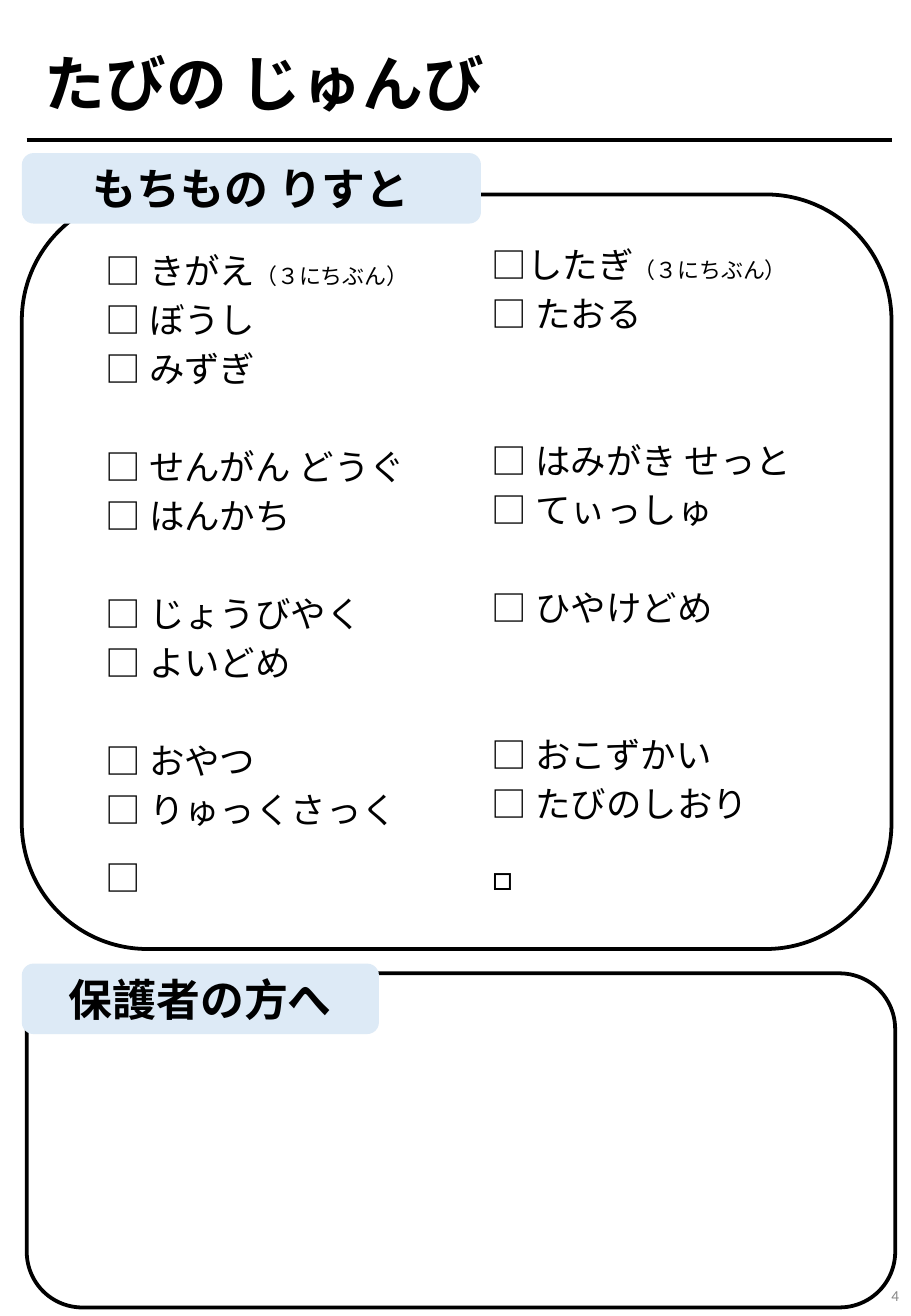
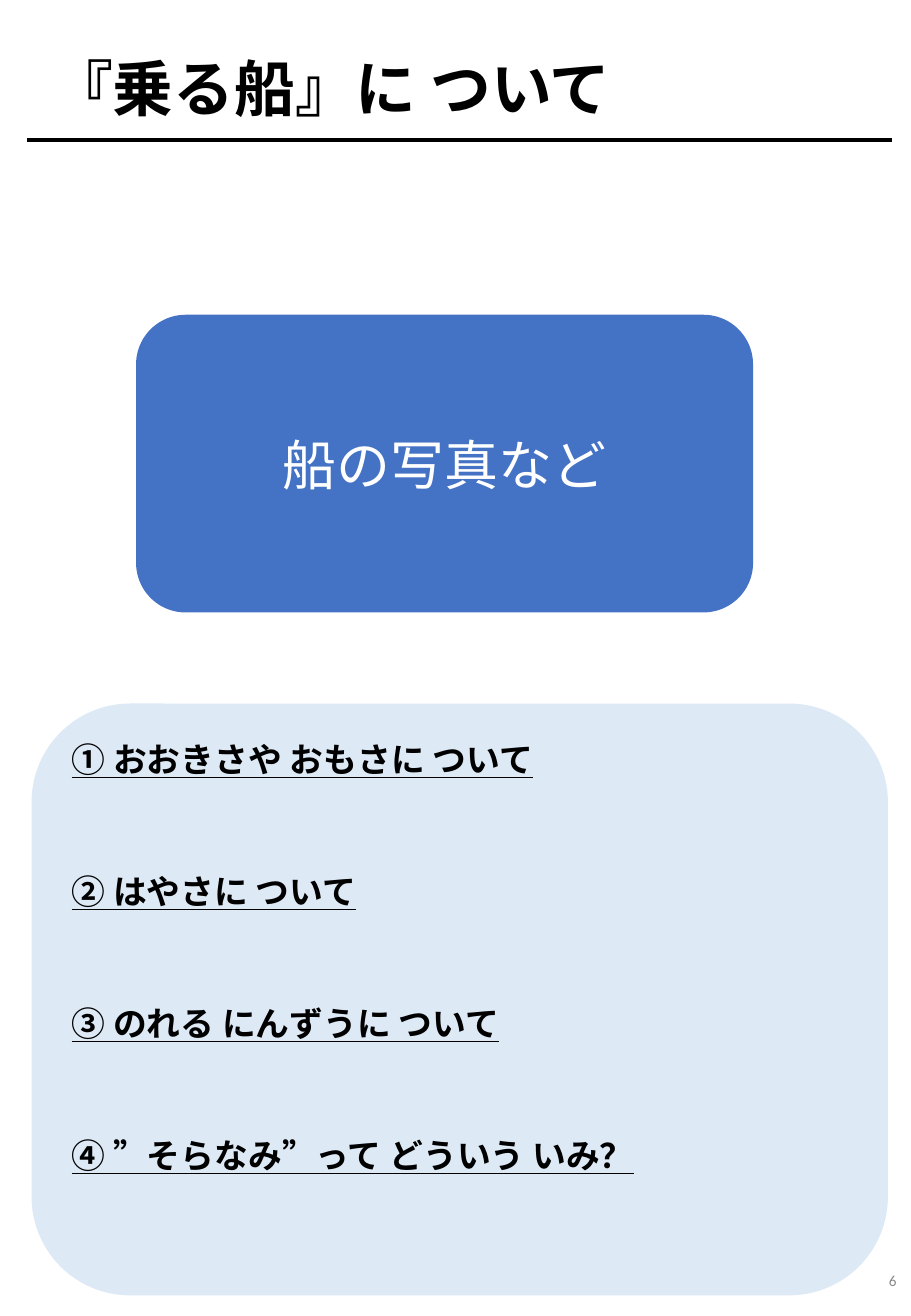
import pptx
import pptx.util
import pptx.dml.color
import pptx.enum.shapes
import pptx.enum.text
import pptx.oxml
import pptx.oxml.ns
from lxml import etree

Inches, Pt = pptx.util.Inches, pptx.util.Pt
ALIGN, ANCHOR = pptx.enum.text.PP_ALIGN, pptx.enum.text.MSO_ANCHOR
HUES = {"ink": "000000", "paper": "FFFFFF", "pale": "DDEAF6", "blue": "4472C4", "gray": "888888"}
FACE = "Calibri"

LEFT = [
    ("□ きがえ", 0, "（３にちぶん）"), ("□ ぼうし", 0, ""), ("□ みずぎ", 0, ""),
    ("□ せんがん どうぐ", 1, ""), ("□ はんかち", 0, ""),
    ("□ じょうびやく", 1, ""), ("□ よいどめ", 0, ""),
    ("□ おやつ", 1, ""), ("□ りゅっくさっく", 0, ""), ("□　", 0.4, ""),
]
RIGHT = [
    ("□したぎ", 0, "（３にちぶん）"), ("□ たおる", 0, ""),
    ("□ はみがき せっと", 2, ""), ("□ てぃっしゅ", 0, ""),
    ("□ ひやけどめ", 1, ""),
    ("□ おこずかい", 2, ""), ("□ たびのしおり", 0, ""), ("□", 0.5, ""),
]
TOPICS = [
    "① おおきさや おもさに ついて", "② はやさに ついて",
    "③ のれる にんずうに ついて", "④ ”そらなみ”って どういう いみ？",
]


def hue(name):
    """Return the named colour."""
    return pptx.dml.color.RGBColor.from_string(HUES[name])


def place(shape, box):
    """Move a shape to a box given in inches."""
    shape.left, shape.top, shape.width, shape.height = map(Inches, box)


def style(run, size, tint, bold, under, face, east):
    """Format a run, with the same face for Japanese letters if asked."""
    font = run.font
    font.size, font.bold, font.underline, font.name = Pt(size), bold, under, face
    font.color.rgb = hue(tint)
    if east:
        latin = run._r.rPr.find(pptx.oxml.ns.qn("a:latin"))
        latin.addnext(etree.Element(pptx.oxml.ns.qn("a:ea"), typeface=face))


def write(frame, text, size=21, tint="ink", bold=False, under=False, face=FACE,
          east=True, align=ALIGN.LEFT, pitch=None, before=0, note=""):
    """Add a paragraph to a frame, with an optional small note after it."""
    para = frame.paragraphs[0]
    if para.runs:
        para = frame.add_paragraph()
    para.alignment, para.space_before = align, Pt(before)
    if pitch:
        para.line_spacing = Pt(pitch)
    props = para._p.get_or_add_pPr()
    props.set("marL", "0")
    props.set("indent", "0")
    etree.SubElement(props, pptx.oxml.ns.qn("a:buNone"))
    for part, points in ((text, size), (note, 13)):
        if part:
            run = para.add_run()
            run.text = part
            style(run, points, tint, bold, under, face, east)


def setup(frame, anchor=ANCHOR.TOP, inset=0):
    """Make a frame wrap at a fixed size with even insets."""
    frame.word_wrap = True
    frame.auto_size = pptx.enum.text.MSO_AUTO_SIZE.NONE
    frame.vertical_anchor = anchor
    frame.margin_left = frame.margin_right = Inches(inset)
    frame.margin_top = frame.margin_bottom = Inches(inset / 2)
    return frame


def panel(slide, box, fill, edge=False):
    """Add a rounded panel."""
    shape = slide.shapes.add_shape(
        pptx.enum.shapes.MSO_SHAPE.ROUNDED_RECTANGLE, *map(Inches, box))
    shape.shadow.inherit = False
    shape.fill.solid()
    shape.fill.fore_color.rgb = hue(fill)
    if edge:
        shape.line.color.rgb = hue("ink")
        shape.line.width = Pt(2.25)
    else:
        shape.line.fill.background()
    return shape


def lower(shape):
    """Send a shape behind the placeholders."""
    shape.element.getparent().insert(2, shape.element)


def label(slide, box, text, fill="pale", **form):
    """Add a rounded panel with centred text."""
    frame = setup(panel(slide, box, fill).text_frame, ANCHOR.MIDDLE, 0.1)
    write(frame, text, align=ALIGN.CENTER, **form)


def frame_page(slide, title, box, number, foot):
    """Add the title, the rule below it and the page number."""
    place(slide.shapes.title, box)
    write(setup(slide.shapes.title.text_frame, inset=0.1), title, size=36, bold=True)
    rule = slide.shapes.add_connector(
        pptx.enum.shapes.MSO_CONNECTOR.STRAIGHT,
        Inches(0.22), Inches(1.15), Inches(7.34), Inches(1.15))
    rule.line.color.rgb = hue("ink")
    rule.line.width = Pt(2.25)
    etree.SubElement(rule.element.spPr, pptx.oxml.ns.qn("a:effectLst"))
    page = slide.shapes.add_textbox(*map(Inches, foot))
    write(setup(page.text_frame, ANCHOR.MIDDLE, 0.1), number, size=9,
          tint="gray", align=ALIGN.RIGHT)


def checks(holder, box, items):
    """Fill a placeholder with a checklist, with gaps counted in lines."""
    place(holder, box)
    frame = setup(holder.text_frame)
    for text, gap, note in items:
        write(frame, text, east=False, pitch=29, before=29 * gap, note=note)


def packing(slide, box):
    """Build the packing list inside its box."""
    x, y, wide, high = box
    lower(panel(slide, box, "paper", edge=True))
    left, right = slide.placeholders[1], slide.placeholders[2]
    checks(left, (x + 0.69, y + 0.4, 3.1, high - 0.6), LEFT)
    checks(right, (x + 3.87, y + 0.35, 3.1, high - 0.6), RIGHT)
    label(slide, (x, y - 0.34, 3.78, 0.58), "もちもの りすと", size=26, bold=True)


def parents(slide, box):
    """Build the empty box for parents."""
    x, y, wide, high = box
    lower(panel(slide, box, "paper", edge=True))
    label(slide, (x - 0.04, y - 0.08, 2.94, 0.58), "保護者の方へ", size=26, bold=True)


def topics(slide, box):
    """Build the list of topics inside its box."""
    x, y, wide, high = box
    lower(panel(slide, box, "pale"))
    body = slide.placeholders[1]
    place(body, (x + 0.33, y + 0.29, wide - 0.66, high - 0.58))
    frame = setup(body.text_frame)
    for count, text in enumerate(TOPICS):
        write(frame, text, size=20, bold=True, under=True, east=False, pitch=24,
              before=54.2 if count else 0)


def main():
    """Build both slides and save them."""
    deck = pptx.Presentation()
    deck.slide_width, deck.slide_height = Inches(7.5), Inches(10.83)

    slide = deck.slides.add_slide(deck.slide_layouts[3])
    frame_page(slide, "たびの じゅんび", (0.27, 0.33, 7.05, 0.71), "4", (5.81, 10.37, 1.69, 0.58))
    packing(slide, (0.18, 1.6, 7.16, 6.21))
    parents(slide, (0.22, 8.01, 7.15, 2.75))

    slide = deck.slides.add_slide(deck.slide_layouts[1])
    frame_page(slide, "『乗る船』に ついて", (0.33, 0.37, 7.05, 0.71), "6", (5.79, 10.25, 1.69, 0.58))
    topics(slide, (0.26, 5.79, 7.05, 4.87))
    label(slide, (1.12, 2.59, 5.08, 2.45), "船の写真など", fill="blue",
          size=32, tint="paper", face="Arial")

    deck.save("out.pptx")


if __name__ == "__main__":
    main()
